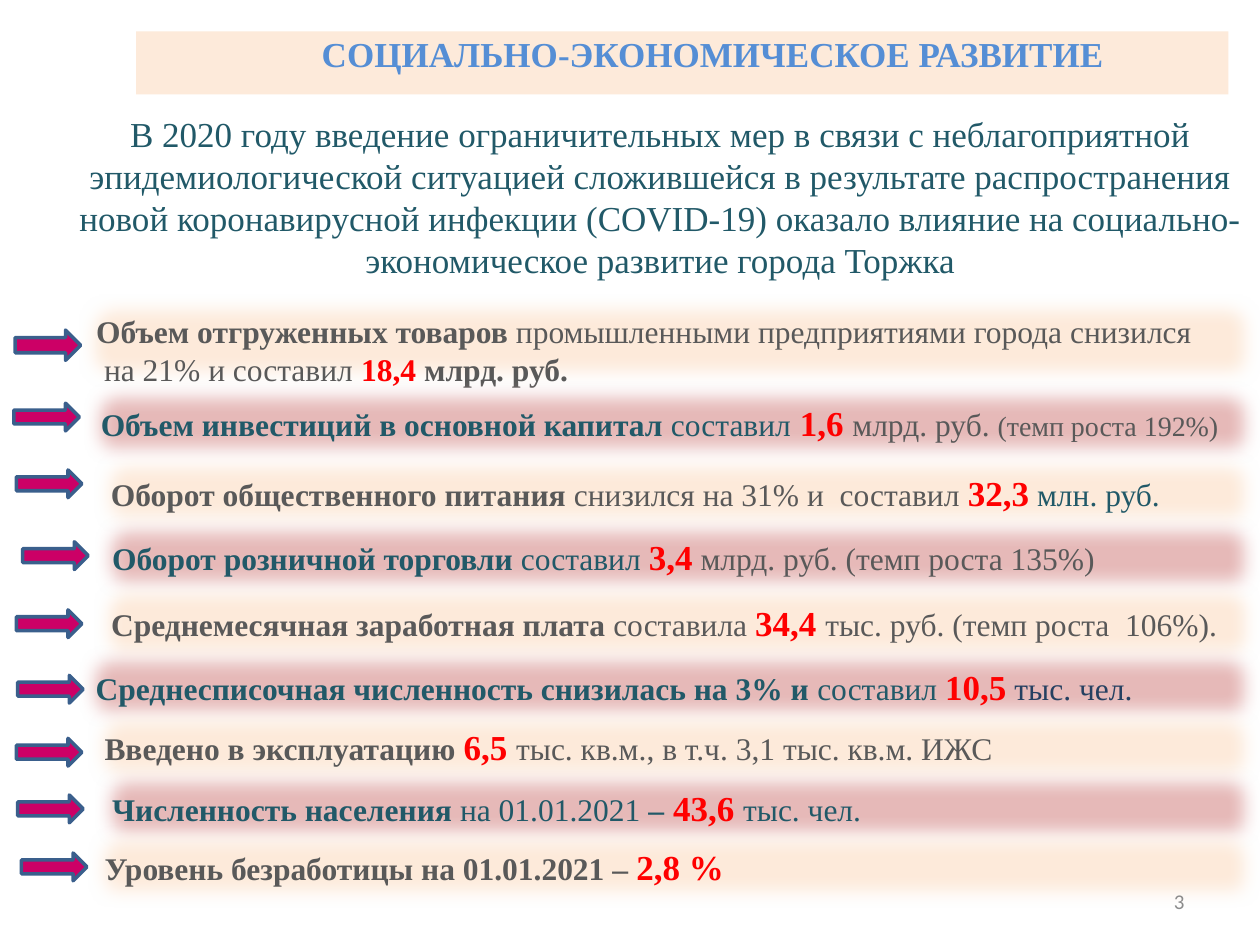
"""Builds the slide on the city's social and economic development."""
from dataclasses import dataclass

from lxml.etree import SubElement
from pptx import Presentation
from pptx.dml.color import RGBColor
from pptx.enum.shapes import MSO_SHAPE as Shape
from pptx.enum.text import MSO_ANCHOR as Anchor, PP_ALIGN as Align
from pptx.oxml.ns import qn
from pptx.util import Inches, Pt

COLORS = {
    "peach": "FDEADA", "rose": "E6B9B8", "edge": "DDD9C3",
    "gray": "595959", "teal": "215968", "navy": "254061",
    "red": "FF0000", "blue": "558ED5", "number": "8C8C8C",
    "arrow": "CC0066", "arrow_edge": "3A5F8C",
}
SERIF = "Times New Roman"
RIGHT_EDGE = 10
SOFT_RADIUS = Pt(10)


@dataclass
class Span:
    text: str
    color: str
    bold: bool = False
    size: int = 18
    font: str = SERIF


@dataclass
class Indicator:
    left: float
    top: float
    arrow_left: float
    arrow_top: float
    fill: str
    lines: list[list[Span]]
    height: float = 0.65
    arrow_height: float = 0.22
    margin_top: float = 0.05


def gray(text: str, bold: bool = False, size: int = 18) -> Span:
    """Return a gray span."""
    return Span(text, "gray", bold, size)


def teal(text: str, bold: bool = False, size: int = 18) -> Span:
    """Return a teal span."""
    return Span(text, "teal", bold, size)


def figure(text: str, size: int = 20) -> Span:
    """Return a bold red key figure."""
    return Span(text, "red", True, size)


INDICATORS = [
    Indicator(0.63, 2.34, 0.12, 2.62, "peach", [
        [gray("Объем отгруженных товаров ", True),
         gray("промышленными предприятиями города снизился")],
        [gray(" на 21% и составил "), figure("18,4 ", 18), gray("млрд. руб.", True)],
    ], height=0.73, arrow_height=0.24, margin_top=0.2),
    Indicator(0.67, 3.03, 0.11, 3.2, "rose", [[
        teal("Объем инвестиций в основной капитал ", True), teal("составил"),
        teal(" ", size=20), figure("1,6 "), gray("млрд. руб. "),
        gray("(темп роста 192%)", size=16)]]),
    Indicator(0.75, 3.58, 0.13, 3.73, "peach", [[
        gray("Оборот общественного питания", True),
        gray(" снизился на 31% и  составил "), figure("32,3"),
        figure(" ", 18), teal("млн. руб.")]]),
    Indicator(0.76, 4.09, 0.18, 4.3, "rose", [[
        teal("Оборот розничной торговли ", True), teal("составил "),
        figure("3,4"), teal(" "), gray("млрд. руб. (темп роста 135%)")]]),
    Indicator(0.75, 4.6, 0.13, 4.84, "peach", [[
        gray("Среднемесячная заработная плата ", True), gray("составила "),
        figure("34,4 "), gray("тыс. руб. (темп роста  106%).")]], height=0.68),
    Indicator(0.63, 5.12, 0.14, 5.36, "rose", [[
        teal("Среднесписочная численность снизилась на 3% и ", True),
        teal("составил "), figure("10,5"), figure(" ", 18),
        Span("тыс. чел.", "navy")]]),
    Indicator(0.7, 5.6, 0.13, 5.86, "peach", [[
        gray("Введено в эксплуатацию ", True), figure("6,5 "),
        gray("тыс. кв.м., в т.ч. 3,1 тыс. кв.м. ИЖС")]]),
    Indicator(0.76, 6.08, 0.14, 6.31, "rose", [[
        teal("Численность населения ", True), teal("на 01.01.2021 "),
        teal("–", True), teal(" ", True, 20), figure("43,6 "),
        teal("тыс. чел.")]]),
    Indicator(0.7, 6.55, 0.17, 6.77, "peach", [[
        gray("Уровень безработицы на 01.01.2021 – ", True), figure("2,8 %")]]),
]
INTRO = (
    "В 2020 году введение ограничительных мер в связи с неблагоприятной "
    "эпидемиологической ситуацией сложившейся в результате распространения "
    "новой коронавирусной инфекции (COVID-19) оказало влияние на "
    "социально-экономическое развитие города Торжка"
)


def rgb(name: str) -> RGBColor:
    """Return a named colour."""
    return RGBColor.from_string(COLORS[name])


def add_box(page, kind: Shape, left: float, top: float, width: float,
            height: float, fill: str = "", line: str = "", weight: float = 1):
    """Add a preset shape without shadow."""
    box = page.shapes.add_shape(
        kind, Inches(left), Inches(top), Inches(width), Inches(height))
    box.shadow.inherit = False
    if fill:
        box.fill.solid()
        box.fill.fore_color.rgb = rgb(fill)
    else:
        box.fill.background()
    if line:
        box.line.color.rgb = rgb(line)
        box.line.width = Pt(weight)
    else:
        box.line.fill.background()
    return box


def soften(box) -> None:
    """Give the shape soft edges."""
    effects = box._element.spPr.find(qn("a:effectLst"))
    SubElement(effects, qn("a:softEdge"), rad=str(SOFT_RADIUS))


def write(box, lines: list[list[Span]], align: Align = Align.LEFT,
          anchor: Anchor = Anchor.MIDDLE) -> None:
    """Fill a box with paragraphs of formatted spans."""
    frame = box.text_frame
    frame.word_wrap = True
    frame.vertical_anchor = anchor
    frame.text = "\n".join("" for _ in lines)
    for para, spans in zip(frame.paragraphs, lines):
        para.alignment = align
        for span in spans:
            run = para.add_run()
            run.text = span.text
            run.font.name = span.font
            run.font.size = Pt(span.size)
            run.font.bold = span.bold
            run.font.color.rgb = rgb(span.color)


def add_indicator(page, item: Indicator) -> None:
    """Add a soft-edged band with its text and arrow."""
    band = add_box(page, Shape.ROUNDED_RECTANGLE, item.left, item.top,
                   RIGHT_EDGE - item.left, item.height, item.fill, "edge")
    soften(band)
    write(band, item.lines)
    band.text_frame.margin_top = Inches(item.margin_top)
    add_box(page, Shape.RIGHT_ARROW, item.arrow_left, item.arrow_top,
            0.52, item.arrow_height, "arrow", "arrow_edge", 2)


def main() -> None:
    """Build and save the deck."""
    deck = Presentation()
    deck.slide_width, deck.slide_height = Inches(10), Inches(7.5)
    page = deck.slides.add_slide(deck.slide_layouts[6])

    intro = add_box(page, Shape.ROUNDED_RECTANGLE, 0.48, 0.76, 9.52, 1.6)
    intro.adjustments[0] = 0.11
    write(intro, [[teal(INTRO, size=20)]], Align.CENTER)

    title = add_box(page, Shape.RECTANGLE, 1.08, 0.25, 8.67, 0.5, "peach")
    write(title, [[Span("СОЦИАЛЬНО-ЭКОНОМИЧЕСКОЕ РАЗВИТИЕ", "blue", True, 20)]],
          Align.CENTER, Anchor.TOP)
    title.text_frame.margin_left = Inches(0.58)
    title.text_frame.paragraphs[0].line_spacing = 0.9

    for item in INDICATORS:
        add_indicator(page, item)

    number = page.shapes.add_textbox(
        Inches(7.17), Inches(6.95), Inches(2.33), Inches(0.4))
    write(number, [[Span("3", "number", size=12, font="Calibri")]], Align.RIGHT)

    deck.save("out.pptx")


if __name__ == "__main__":
    main()
